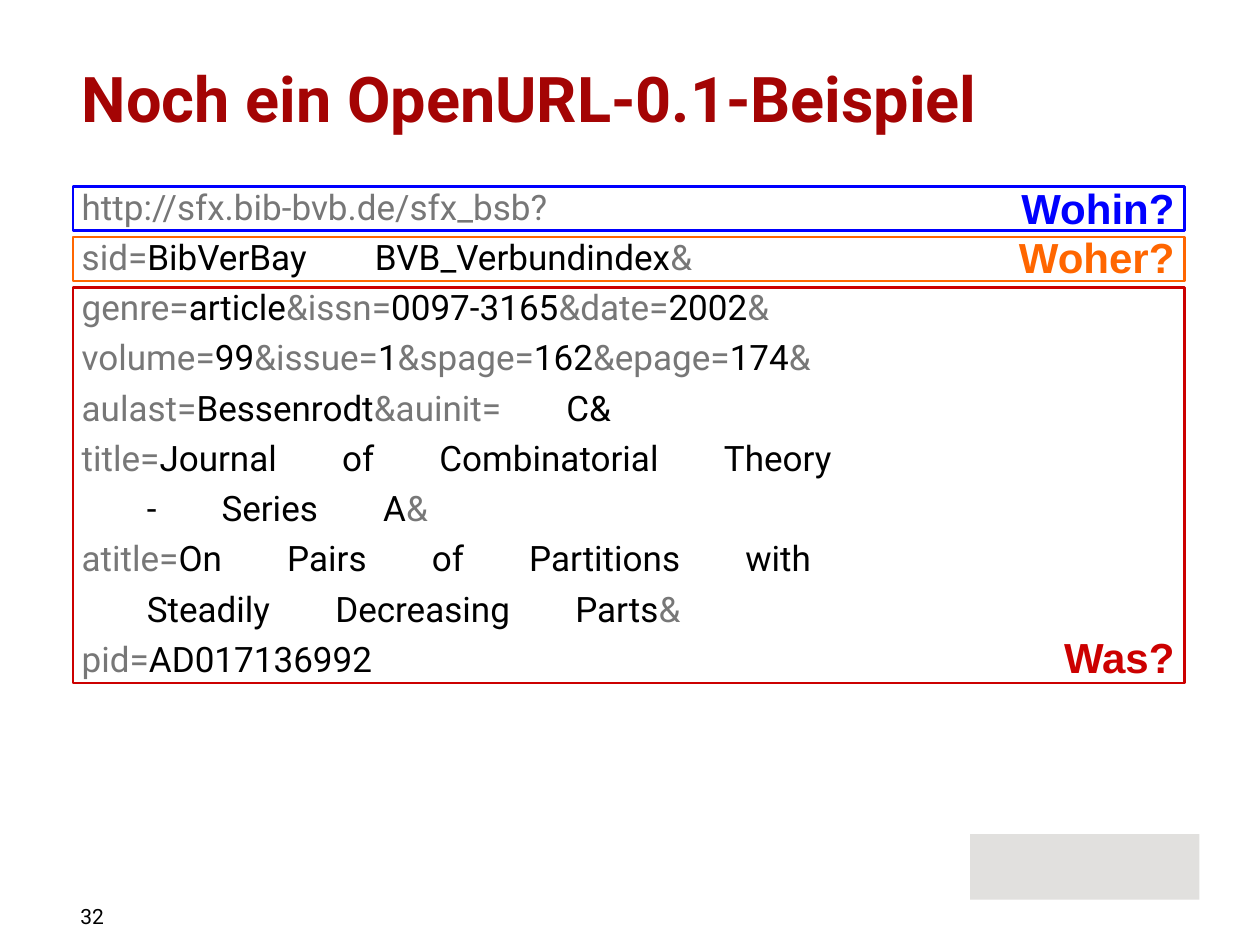
from pptx import Presentation
from pptx.dml.color import RGBColor
from pptx.enum.shapes import MSO_SHAPE
from pptx.enum.text import MSO_ANCHOR, PP_ALIGN
from pptx.util import Inches, Pt

RECTANGLE = MSO_SHAPE.RECTANGLE
TOP, MIDDLE = MSO_ANCHOR.TOP, MSO_ANCHOR.MIDDLE
LEFT, RIGHT = PP_ALIGN.LEFT, PP_ALIGN.RIGHT

COLORS = {
    "title": "A40404",
    "syntax": "777777",
    "value": "000000",
    "white": "FFFFFF",
    "block": "E1E0DE",
    "where_to": "0000FF",
    "where_from": "FF6600",
    "what": "CC0000",
}

URL_LINES = [
    "http://sfx.bib-bvb.de/sfx_bsb?",
    "sid=|BibVerBay|%3A|BVB_Verbundindex|&",
    "genre=|article|&issn=|0097-3165|&date=|2002|&",
    "volume=|99|&issue=|1|&spage=|162|&epage=|174|&",
    "aulast=|Bessenrodt|&auinit=|%20|C&",
    "title=|Journal|%20|of|%20|Combinatorial|%20|Theory",
    "%20|-|%20|Series|%20|A|&",
    "atitle=|On|%20|Pairs|%20|of|%20|Partitions|%20|with",
    "%20|Steadily|%20|Decreasing|%20|Parts|&",
    "pid=|AD017136992",
]


def token_color(token):
    """Return the colour name for one part of the URL."""
    if token.startswith("%"):
        return "white"
    if token.startswith("&") or token.endswith(("=", "?")):
        return "syntax"
    return "value"


class SlideBuilder:
    """Hold the style and the current slide, and draw its elements."""

    text_font = "Roboto"
    label_font = "Arial"

    def __init__(self, slide):
        self.slide = slide

    def color(self, name):
        """Return a named colour."""
        return RGBColor.from_string(COLORS[name])

    def style(self, span, size, color, font=None, bold=False):
        """Format one run."""
        span.font.name = font or self.text_font
        span.font.size = Pt(size)
        span.font.bold = bold
        span.font.color.rgb = self.color(color)

    def rectangle(self, left, top, width, height, fill=None, line=None):
        """Add a filled or outlined rectangle."""
        box = self.slide.shapes.add_shape(
            RECTANGLE, Inches(left), Inches(top), Inches(width), Inches(height))
        box.shadow.inherit = False
        if fill:
            box.fill.solid()
            box.fill.fore_color.rgb = self.color(fill)
        else:
            box.fill.background()
        if line:
            box.line.color.rgb = self.color(line)
            box.line.width = Pt(1.5)
        else:
            box.line.fill.background()
        return box

    def text_box(self, left, top, width, height, anchor=TOP):
        """Add an empty wrapping text box and return its frame."""
        box = self.slide.shapes.add_textbox(
            Inches(left), Inches(top), Inches(width), Inches(height))
        frame = box.text_frame
        frame.word_wrap = True
        frame.vertical_anchor = anchor
        return frame

    def text(self, text, left, top, width, height, size, color,
             bold=False, anchor=TOP):
        """Add a text box with a single run."""
        frame = self.text_box(left, top, width, height, anchor)
        frame.text = text
        para = frame.paragraphs[0]
        para.alignment = LEFT
        self.style(para.runs[0], size, color, bold=bold)

    def url(self, lines, left, top, width, height):
        """Add the URL, one paragraph a line, coloured by token."""
        frame = self.text_box(left, top, width, height)
        for index, line in enumerate(lines):
            para = frame.add_paragraph() if index else frame.paragraphs[0]
            properties = para._p.get_or_add_pPr()
            properties.set("marL", str(Inches(0.38)))
            properties.set("indent", str(Inches(-0.38)))
            if index:
                para.space_before = Pt(4.7)
            for token in line.split("|"):
                span = para.add_run()
                span.text = token
                self.style(span, 20, token_color(token))

    def label(self, text, top, width, color):
        """Add a white question label that ends at the right edge."""
        box = self.rectangle(9.42 - width, top, width, 0.5, fill="white")
        frame = box.text_frame
        frame.word_wrap = True
        frame.vertical_anchor = TOP
        frame.text = text
        para = frame.paragraphs[0]
        para.alignment = RIGHT
        self.style(para.runs[0], 24, color, self.label_font, bold=True)

    def frame(self, top, height, color):
        """Add an outline around a part of the URL."""
        self.rectangle(0.58, top, 8.82, height, line=color)


def main():
    """Build the slide and save the deck."""
    deck = Presentation()
    deck.slide_width, deck.slide_height = Inches(10), Inches(7.5)
    page = SlideBuilder(deck.slides.add_slide(deck.slide_layouts[6]))

    page.rectangle(7.7, 6.62, 1.82, 0.52, fill="block")
    page.text("32", 0.54, 7.12, 2.05, 0.38, 12, "value")
    page.text("Noch ein OpenURL-0.1-Beispiel", 0.55, 0.4, 8.89, 0.74, 36,
              "title", bold=True, anchor=MIDDLE)
    page.url(URL_LINES, 0.55, 1.42, 8.89, 5.09)

    page.label("Woher?", 1.79, 1.45, "where_from")
    page.label("Wohin?", 1.4, 1.45, "where_to")
    page.label("Was?", 4.96, 1.1, "what")
    page.frame(1.48, 0.35, "where_to")
    page.frame(2.28, 3.14, "what")
    page.frame(1.88, 0.35, "where_from")

    deck.save("out.pptx")


if __name__ == "__main__":
    main()
